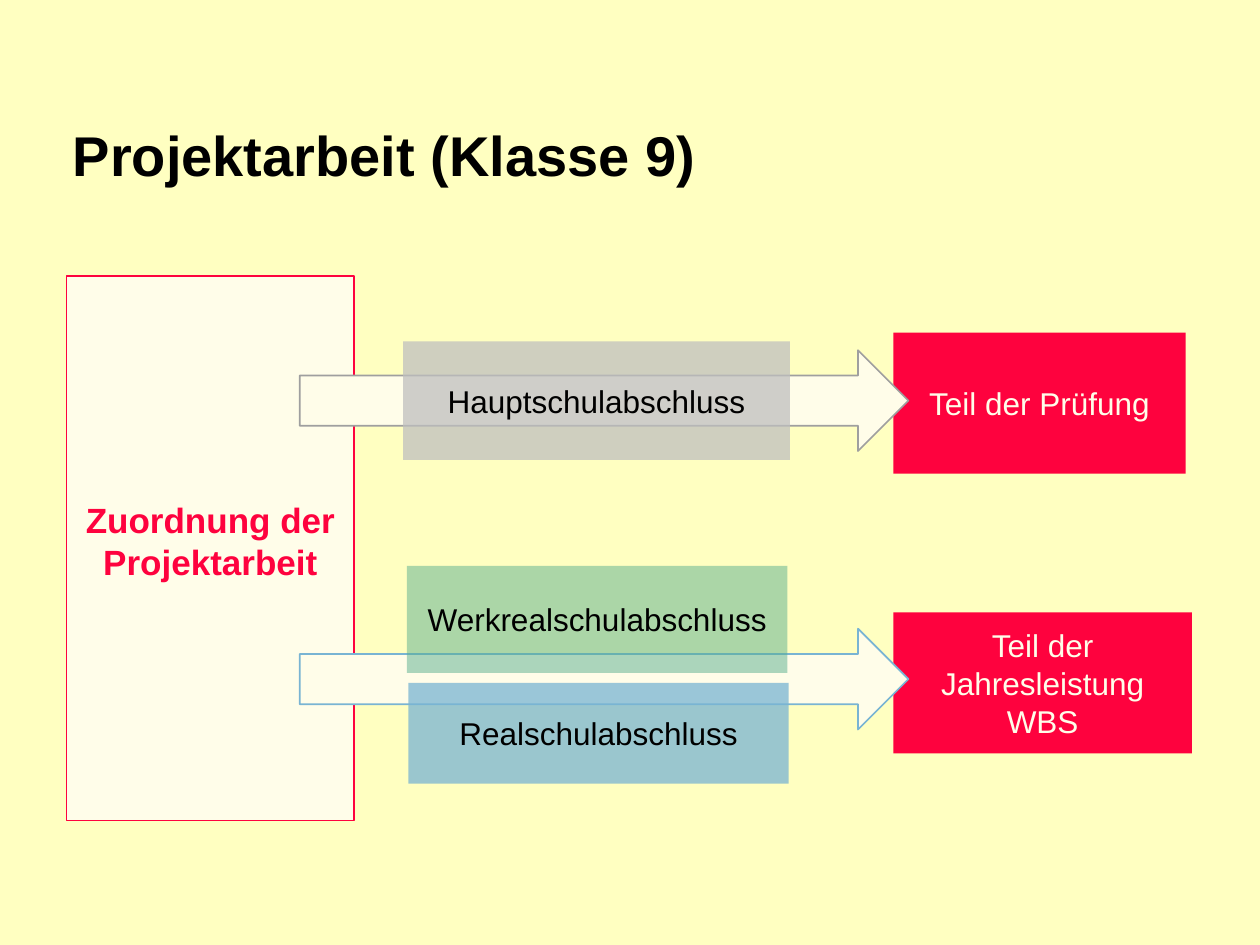
from lxml import etree
from pptx import Presentation
from pptx.dml.color import RGBColor
from pptx.enum.shapes import MSO_SHAPE
from pptx.enum.text import MSO_ANCHOR, PP_ALIGN
from pptx.oxml.ns import qn
from pptx.util import Inches, Pt

RECT, ARROW = MSO_SHAPE.RECTANGLE, MSO_SHAPE.RIGHT_ARROW
MIDDLE = MSO_ANCHOR.MIDDLE
LEFT, CENTER = PP_ALIGN.LEFT, PP_ALIGN.CENTER

COLORS = {
    "background": "FFFFC1", "cream": "FFFDE9", "red": "FE023E", "black": "000000",
    "outline": "9F9F9F", "gray": "BFBFBF", "blue": "79B4D3", "green": "59AF8F",
}

TITLE = "Projektarbeit (Klasse 9)"
PANEL = "Zuordnung der Projektarbeit"
RESULTS = [
    ("Teil der Prüfung", 2.64, 2.32),
    ("Teil der Jahresleistung WBS", 4.86, 2.37),
]
ARROWS = [(2.78, "outline"), (4.99, "blue")]
DEGREES = [
    ("Realschulabschluss", (3.24, 5.42, 3.02, 0.8), "blue", 75),
    ("Hauptschulabschluss", (3.2, 2.71, 3.07, 0.94), "gray", 75),
    ("Werkrealschulabschluss", (3.23, 4.49, 3.02, 0.85), "green", 50),
]


def rgb(name):
    return RGBColor.from_string(COLORS[name])


def write(s, text, size, color, bold=False, align=CENTER):
    tf = s.text_frame
    tf.word_wrap = True
    tf.vertical_anchor = MIDDLE
    p = tf.paragraphs[0]
    p.text = text
    p.alignment = align
    p.font.name = "Arial"
    p.font.size = Pt(size)
    p.font.bold = bold
    p.font.color.rgb = rgb(color)


def add_block(slide, kind, box, fill, line=None, width=1, opacity=100):
    s = slide.shapes.add_shape(kind, *map(Inches, box))
    s.shadow.inherit = False
    s.fill.solid()
    s.fill.fore_color.rgb = rgb(fill)
    if opacity < 100:
        color = s.fill._xPr.find(qn("a:solidFill")).find(qn("a:srgbClr"))
        etree.SubElement(color, qn("a:alpha"), val=str(opacity * 1000))
    if line:
        s.line.color.rgb = rgb(line)
        s.line.width = Pt(width)
    else:
        s.line.fill.background()
    return s


def main():
    prs = Presentation()
    prs.slide_width, prs.slide_height = Inches(10), Inches(7.5)
    slide = prs.slides.add_slide(prs.slide_layouts[6])
    slide.background.fill.solid()
    slide.background.fill.fore_color.rgb = rgb("background")

    title = slide.shapes.add_textbox(*map(Inches, (0.48, 0.79, 9, 0.87)))
    write(title, TITLE, 32, "black", bold=True, align=LEFT)

    panel = add_block(slide, RECT, (0.53, 2.19, 2.28, 4.32), "cream", "red", 0.75)
    write(panel, PANEL, 20, "red", bold=True)
    panel.text_frame.margin_bottom = Inches(0.17)

    for text, top, width in RESULTS:
        s = add_block(slide, RECT, (7.09, top, width, 1.12), "red")
        write(s, text, 18, "cream")

    for top, line in ARROWS:
        add_block(slide, ARROW, (2.38, top, 4.83, 0.8), "cream", line)

    for text, box, fill, opacity in DEGREES:
        s = add_block(slide, RECT, box, fill, opacity=opacity)
        write(s, text, 18, "black")

    prs.save("out.pptx")


if __name__ == "__main__":
    main()
